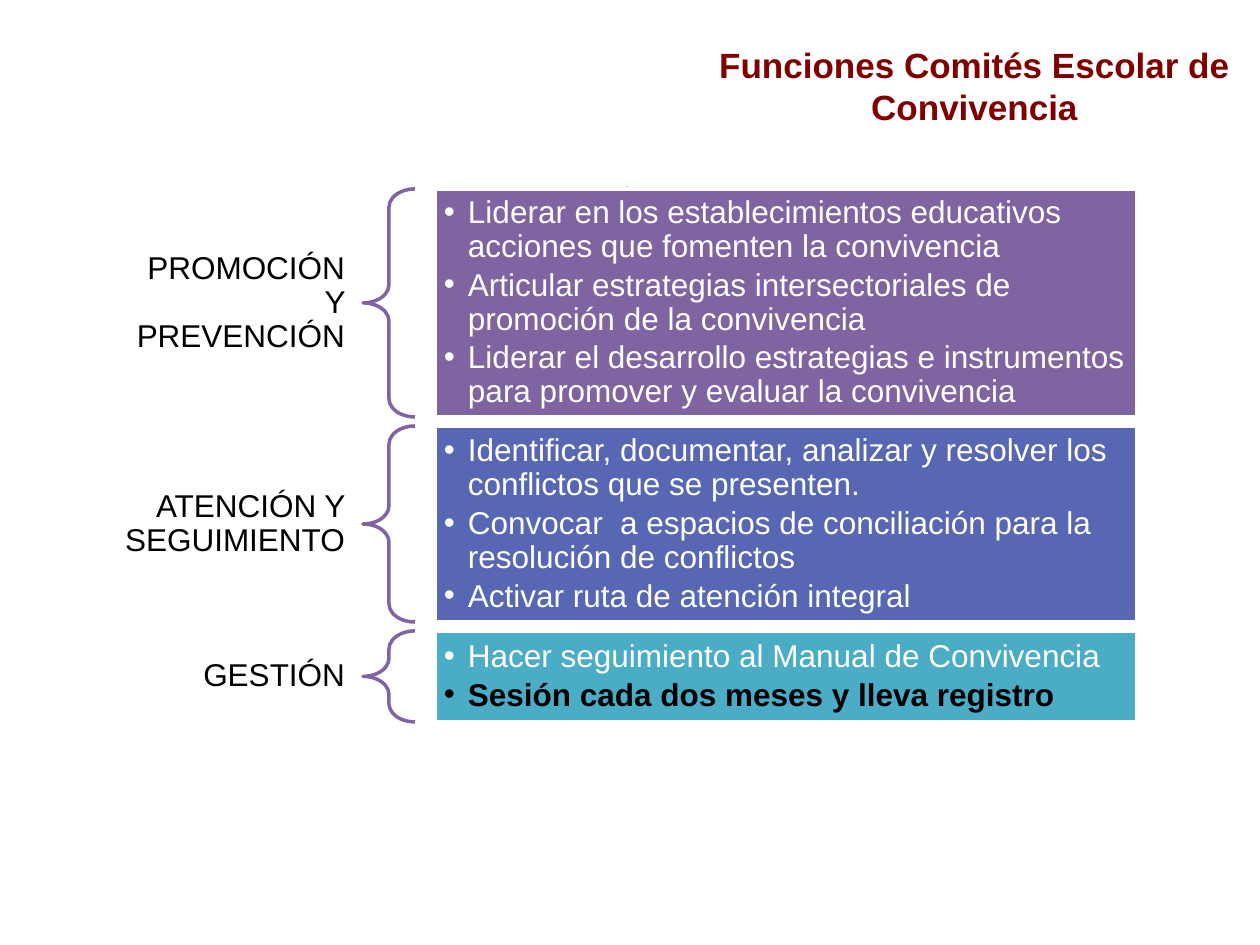
from lxml.etree import SubElement
from pptx import Presentation
from pptx.dml.color import RGBColor
from pptx.enum.shapes import MSO_SHAPE
from pptx.enum.text import MSO_ANCHOR, PP_ALIGN
from pptx.oxml.ns import qn
from pptx.util import Pt

PX = 914400 / 126
FONT = "Arial"
BLACK = RGBColor(0x00, 0x00, 0x00)
WHITE = RGBColor(0xFF, 0xFF, 0xFF)
MAROON = RGBColor(0x80, 0x00, 0x00)
PURPLE = RGBColor(0x80, 0x64, 0xA2)
BLUE = RGBColor(0x57, 0x67, 0xB4)
TEAL = RGBColor(0x4B, 0xAC, 0xC6)

ROWS_LEFT, ROWS_TOP, ROWS_WIDTH, ROW_GAP = 105, 189, 1032, 9
LABEL_WIDTH, BRACE_WIDTH, PANEL_OFFSET = 258, 52, 330
BULLET_INDENT = 24

# Label, panel colour, row height, and (text, emphasised) for each duty
ROWS = [
    ("PROMOCIÓN Y PREVENCIÓN", PURPLE, 228, [
        ("Liderar en los establecimientos educativos acciones que fomenten la convivencia", False),
        ("Articular estrategias intersectoriales de promoción de la convivencia", False),
        ("Liderar el desarrollo estrategias e instrumentos para promover y evaluar la convivencia", False),
    ]),
    ("ATENCIÓN Y SEGUIMIENTO", BLUE, 196, [
        ("Identificar, documentar, analizar y resolver los conflictos que se presenten.", False),
        ("Convocar  a espacios de conciliación para la resolución de conflictos", False),
        ("Activar ruta de atención integral", False),
    ]),
    ("GESTIÓN", TEAL, 91, [
        ("Hacer seguimiento al Manual de Convivencia", False),
        ("Sesión cada dos meses y lleva registro", True),
    ]),
]


def emu(pixels):
    return round(pixels * PX)


def place(box):
    return [emu(length) for length in box]


def set_margins(frame, horizontal, vertical):
    frame.margin_left = frame.margin_right = emu(horizontal)
    frame.margin_top = frame.margin_bottom = emu(vertical)


def style(para, size, color, bold=False, align=PP_ALIGN.LEFT):
    para.alignment = align
    para.font.name = FONT
    para.font.size = Pt(size)
    para.font.bold = bold
    para.font.color.rgb = color


def add_text(slide, box, text, size, color, bold=False, align=PP_ALIGN.CENTER):
    frame = slide.shapes.add_textbox(*place(box)).text_frame
    frame.word_wrap = True
    para = frame.paragraphs[0]
    para.text = text
    style(para, size, color, bold, align)
    return frame


def add_label(slide, box, text):
    frame = add_text(slide, box, text, 18, BLACK, align=PP_ALIGN.RIGHT)
    frame.vertical_anchor = MSO_ANCHOR.MIDDLE
    set_margins(frame, 18, 6)
    frame.paragraphs[0].line_spacing = 0.9


def add_brace(slide, box):
    brace = slide.shapes.add_shape(MSO_SHAPE.LEFT_BRACE, *place(box))
    brace.shadow.inherit = False
    brace.adjustments[0] = 0.35
    brace.adjustments[1] = 0.5
    brace.fill.background()
    brace.line.color.rgb = PURPLE
    brace.line.width = Pt(2)


def add_bullet(para):
    properties = para._p.get_or_add_pPr()
    properties.set("marL", str(emu(BULLET_INDENT)))
    properties.set("indent", str(-emu(BULLET_INDENT)))
    SubElement(properties, qn("a:buFont"), typeface=FONT)
    SubElement(properties, qn("a:buChar"), char="•")


def add_panel(slide, box, color, duties):
    panel = slide.shapes.add_shape(MSO_SHAPE.RECTANGLE, *place(box))
    panel.shadow.inherit = False
    panel.fill.solid()
    panel.fill.fore_color.rgb = color
    panel.line.color.rgb = WHITE
    panel.line.width = Pt(2)
    frame = panel.text_frame
    frame.word_wrap = True
    frame.vertical_anchor = MSO_ANCHOR.MIDDLE
    set_margins(frame, 9, 9)
    for index, (text, emphasised) in enumerate(duties):
        para = frame.add_paragraph() if index else frame.paragraphs[0]
        para.text = text
        add_bullet(para)
        para.line_spacing = 0.9
        para.space_after = Pt(2.7)
        style(para, 18, BLACK if emphasised else WHITE, emphasised)


def add_row(slide, box, label, color, duties):
    """Place a label, its brace and the panel of duties side by side."""
    left, top, width, height = box
    add_label(slide, (left, top, LABEL_WIDTH, height), label)
    add_brace(slide, (left + LABEL_WIDTH, top, BRACE_WIDTH, height))
    panel_box = (left + PANEL_OFFSET, top, width - PANEL_OFFSET, height)
    add_panel(slide, panel_box, color, duties)


def build_slide(deck):
    slide = deck.slides.add_slide(deck.slide_layouts[6])
    add_text(slide, (689, 37, 571, 97), "Funciones Comités Escolar de Convivencia",
             20, MAROON, bold=True)
    add_text(slide, (312, 162, 630, 36), ".", 12, BLACK)
    top = ROWS_TOP
    for label, color, height, duties in ROWS:
        add_row(slide, (ROWS_LEFT, top, ROWS_WIDTH, height), label, color, duties)
        top += height + ROW_GAP


def main():
    deck = Presentation()
    deck.slide_width, deck.slide_height = emu(1260), emu(945)
    build_slide(deck)
    deck.save("out.pptx")


if __name__ == "__main__":
    main()
